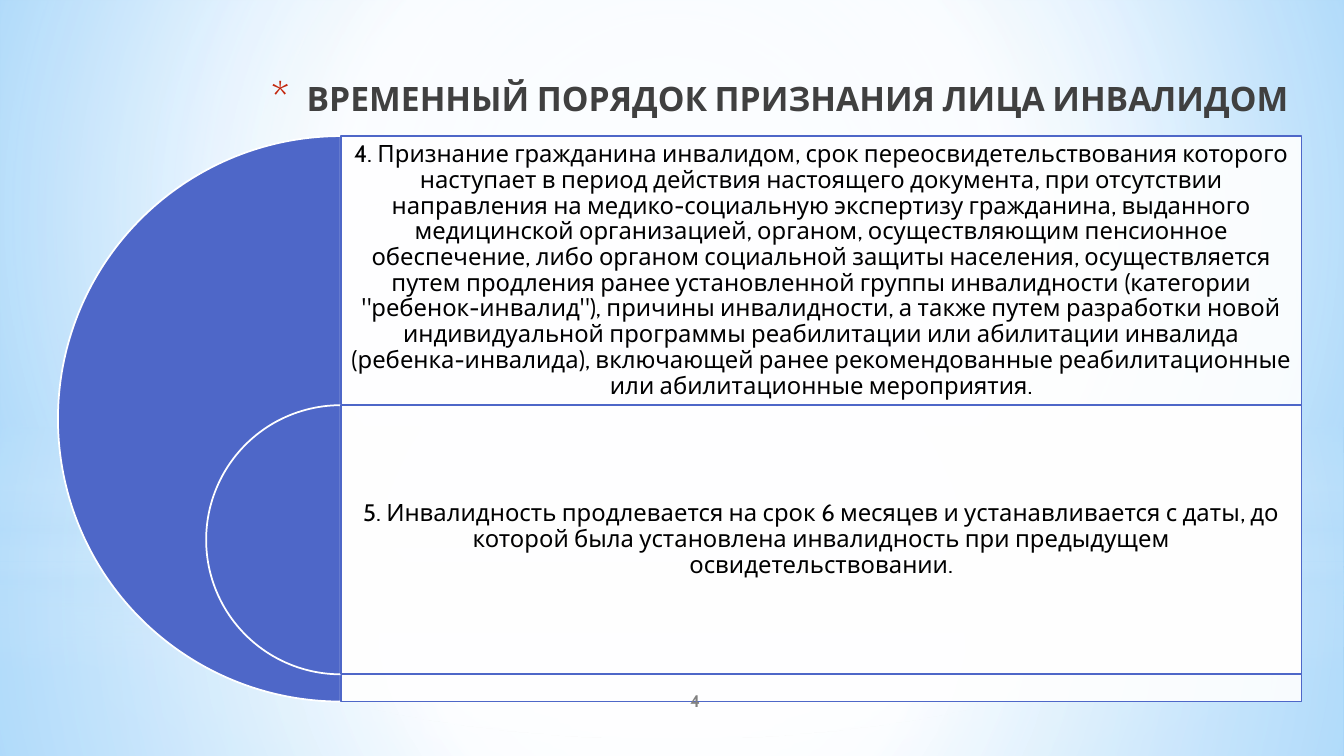
import dataclasses
import typing

import lxml.etree
import pptx
import pptx.dml.color
import pptx.enum.shapes
import pptx.enum.text
import pptx.oxml
import pptx.oxml.ns
import pptx.util

Inches = pptx.util.Inches
Pt = pptx.util.Pt
RGBColor = pptx.dml.color.RGBColor
Forms = pptx.enum.shapes.MSO_SHAPE
Align = pptx.enum.text.PP_ALIGN
Anchor = pptx.enum.text.MSO_ANCHOR
qn = pptx.oxml.ns.qn

WHITE = RGBColor(0xFF, 0xFF, 0xFF)
BLACK = RGBColor(0, 0, 0)
BLUE = RGBColor(0x4E, 0x67, 0xC8)
PALE = RGBColor(0xB4, 0xDC, 0xFA)
SKY = RGBColor(0x9E, 0xD5, 0xFF)
DEEP = RGBColor(0x5B, 0xB9, 0xFF)
DARK = RGBColor(0x40, 0x40, 0x40)
GRAY = RGBColor(0x80, 0x80, 0x80)
RED = RGBColor(0xC3, 0x26, 0x0C)
FONT = "Cabin"
WIDE, HIGH = 13.33, 7.5
LEFT, TOP, WIDTH, STEP = 3.38, 1.35, 9.53, 2.67

Stops = list[tuple[int, RGBColor, int]]


@dataclasses.dataclass
class Glow:
    top: float
    height: float
    stops: Stops
    form: typing.Any = Forms.RECTANGLE
    round: bool = True


@dataclasses.dataclass
class Point:
    size: float
    text: str


def low(first: int) -> Stops:
    return [(0, WHITE, first), (37, WHITE, first - 15), (100, PALE, first - 12)]


def high(first: int) -> Stops:
    return [(0, WHITE, first), (48, WHITE, first - 27), (100, PALE, first - 10)]


def halo(edge: int) -> Stops:
    return [(0, WHITE, 100), (edge, WHITE, 0)]


BAND: Stops = [(0, WHITE, 0), (29, WHITE, 30), (45, PALE, 40),
               (55, WHITE, 26), (65, PALE, 60), (100, WHITE, 0)]
GLOWS = [
    Glow(5.58, 1.92, low(91)),
    Glow(0, 5.58, high(89)),
    Glow(4.12, 2.5, BAND, round=False),
    Glow(1.75, 5.58, halo(56), Forms.OVAL),
    Glow(4.23, 3.27, low(92)),
    Glow(0, 4.23, high(90)),
    Glow(2.9, 2.5, BAND, round=False),
    Glow(1.75, 5.58, halo(54), Forms.OVAL),
]
POINTS = [
    Point(5.61, '4. Признание гражданина инвалидом, срок переосвидетельствования которого '
          'наступает в период действия настоящего документа, при отсутствии направления на '
          'медико-социальную экспертизу гражданина, выданного медицинской организацией, '
          'органом, осуществляющим пенсионное обеспечение, либо органом социальной защиты '
          'населения, осуществляется путем продления ранее установленной группы инвалидности '
          '(категории "ребенок-инвалид"), причины инвалидности, а также путем разработки '
          'новой индивидуальной программы реабилитации или абилитации инвалида '
          '(ребенка-инвалида), включающей ранее рекомендованные реабилитационные или '
          'абилитационные мероприятия.'),
    Point(2.67, '5. Инвалидность продлевается на срок 6 месяцев и устанавливается с даты, до '
          'которой была установлена инвалидность при предыдущем освидетельствовании.'),
]


def blend(host: typing.Any, stops: Stops, round: bool = True,
          focus: tuple[int, ...] = (50, 50, 50, 50)) -> None:
    marks = "".join(
        f'<a:gs pos="{pos * 1000}"><a:srgbClr val="{tint}">'
        f'<a:alpha val="{alpha * 1000}"/></a:srgbClr></a:gs>'
        for pos, tint, alpha in stops)
    sides = " ".join(f'{side}="{part * 1000}"' for side, part in zip("ltrb", focus))
    shade = (f'<a:path path="circle"><a:fillToRect {sides}/></a:path>' if round
             else '<a:lin ang="5400000" scaled="0"/>')
    fill = pptx.oxml.parse_xml(
        f'<a:gradFill xmlns:a="{pptx.oxml.ns.nsdecls("a").split(chr(34))[1]}" '
        f'rotWithShape="1"><a:gsLst>{marks}</a:gsLst>{shade}</a:gradFill>')
    host.replace(host.find(qn("a:noFill")), fill)


def shape(slide: typing.Any, form: typing.Any, left: float, top: float,
          width: float, height: float, fill: RGBColor | None = None,
          line: RGBColor | None = None, alpha: int = 100) -> typing.Any:
    item = slide.shapes.add_shape(form, Inches(left), Inches(top), Inches(width), Inches(height))
    item.shadow.inherit = False
    if fill is None:
        item.fill.background()
    else:
        item.fill.solid()
        item.fill.fore_color.rgb = fill
        if alpha < 100:
            tint = item.element.spPr.find(qn("a:solidFill"))[0]
            lxml.etree.SubElement(tint, qn("a:alpha"), val=str(alpha * 1000))
    if line is None:
        item.line.fill.background()
    else:
        item.line.color.rgb = line
        item.line.width = Pt(1.25)
    return item


def write(box: typing.Any, text: str, *, size: float, color: RGBColor,
          bold: bool = False, align: typing.Any = Align.CENTER,
          anchor: typing.Any = Anchor.MIDDLE, inset: float | None = None,
          space: float = 1.0) -> typing.Any:
    frame = box.text_frame
    frame.word_wrap = True
    frame.auto_size = pptx.enum.text.MSO_AUTO_SIZE.NONE
    frame.vertical_anchor = anchor
    if inset is not None:
        frame.margin_left = frame.margin_right = Inches(inset)
        frame.margin_top = frame.margin_bottom = Inches(inset)
    para = frame.paragraphs[0]
    para.alignment = align
    para.line_spacing = space
    run = para.add_run()
    run.text = text
    run.font.name = FONT
    run.font.size = Pt(size)
    run.font.bold = bold
    run.font.color.rgb = color
    return para


def label(slide: typing.Any, left: float, top: float, width: float,
          height: float, text: str, **style: typing.Any) -> None:
    box = slide.shapes.add_textbox(Inches(left), Inches(top), Inches(width), Inches(height))
    write(box, text, **style)


def star(para: typing.Any) -> None:
    props = para._p.get_or_add_pPr()
    props.set("marL", str(Inches(0.35)))
    props.set("indent", str(-Inches(0.35)))
    tint = lxml.etree.SubElement(props, qn("a:buClr"))
    lxml.etree.SubElement(tint, qn("a:srgbClr"), val=str(RED))
    lxml.etree.SubElement(props, qn("a:buSzPct"), val="128000")
    lxml.etree.SubElement(props, qn("a:buFont"), typeface=FONT)
    lxml.etree.SubElement(props, qn("a:buChar"), char="*")


def main() -> None:
    deck = pptx.Presentation()
    deck.slide_width, deck.slide_height = Inches(WIDE), Inches(HIGH)
    slide = deck.slides.add_slide(deck.slide_layouts[5])
    slide.background.fill.background()
    blend(slide.element.find(".//" + qn("p:bgPr")),
          [(0, SKY, 100), (60, WHITE, 100), (100, DEEP, 100)], focus=(20, 10, 20, 60))

    for glow in GLOWS:
        item = shape(slide, glow.form, 0, glow.top, WIDE, glow.height)
        blend(item.element.spPr, glow.stops, glow.round)

    title = slide.shapes.title
    title.left, title.top = Inches(0.57), Inches(0.46)
    title.width, title.height = Inches(12.31), Inches(0.76)
    slide.shapes.element.append(title.element)
    star(write(title, "ВРЕМЕННЫЙ ПОРЯДОК ПРИЗНАНИЯ ЛИЦА ИНВАЛИДОМ", size=24,
               color=DARK, bold=True, align=Align.RIGHT, anchor=Anchor.BOTTOM))

    for row, point in enumerate(POINTS):
        top = TOP + row * STEP
        size = point.size
        pie = shape(slide, Forms.PIE, LEFT - size / 2, top, size, size, BLUE, WHITE)
        pie.adjustments[0], pie.adjustments[1] = 54, 162
        shape(slide, Forms.RECTANGLE, LEFT, top, WIDTH, size, WHITE, BLUE, alpha=90)
        label(slide, LEFT, top, WIDTH, STEP, point.text,
              size=17, color=BLACK, inset=0.07, space=0.9)

    label(slide, 5.56, 6.75, 2.67, 0.4, "4", size=12, color=GRAY, bold=True)
    deck.save("out.pptx")


if __name__ == "__main__":
    main()
